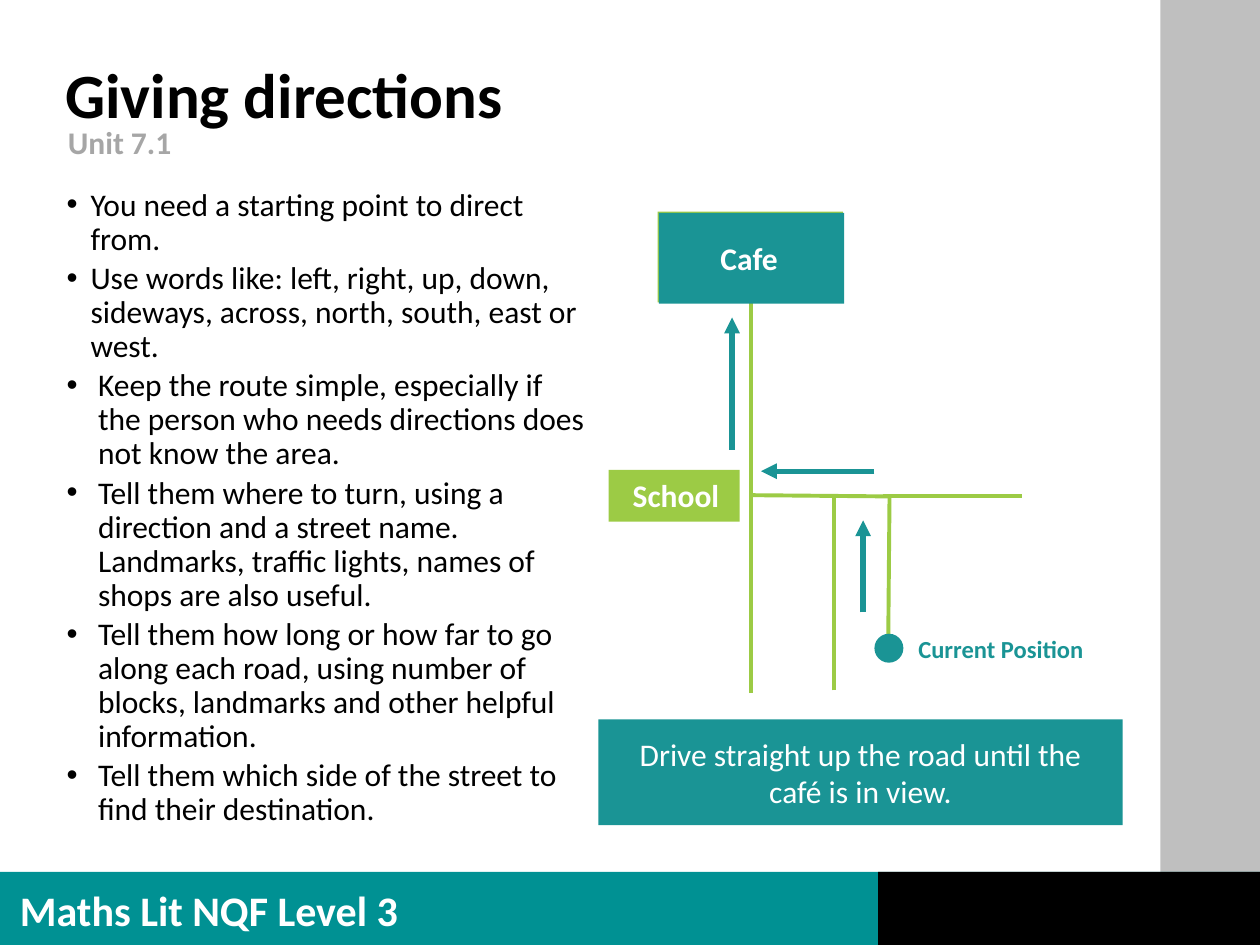
"""Build the 'Giving directions' lesson slide with its street map."""
import pptx
import pptx.dml.color
import pptx.enum.shapes
import pptx.enum.text
import pptx.oxml.ns
import pptx.util
from lxml import etree

THEME = {
    "font": "Calibri",
    "teal": "1A9495", "footer": "009193", "green": "9CCB45", "black": "000000",
    "white": "FFFFFF", "side": "BFBFBF", "muted": "A6A6A6",
    "heading": 36, "course": 24, "text": 18, "note": 14, "road": 2.25, "arrow": 3,
}
COLUMNS, ROWS = 100, 75
RECT = pptx.enum.shapes.MSO_SHAPE.RECTANGLE
OVAL = pptx.enum.shapes.MSO_SHAPE.OVAL
CENTER = pptx.enum.text.PP_ALIGN.CENTER
TOP = pptx.enum.text.MSO_ANCHOR.TOP
MIDDLE = pptx.enum.text.MSO_ANCHOR.MIDDLE

FRAME = [
    (RECT, (92.1, 0, 7.9, 74.9), "side"),
    (RECT, (0, 69.2, 100, 5.8), "footer"),
    (RECT, (69.7, 69.2, 30.3, 5.8), "black"),
]
HEADINGS = [
    ("Maths Lit NQF Level 3", (0.6, 69.7, 37.5, 5), "course", "white"),
    ("Giving directions", (4.2, 4.6, 86.5, 7.9), "heading", "black"),
    ("Unit 7.1", (4.4, 9.6, 86.5, 3.3), "text", "muted"),
]
TIGHT = {"line_spacing": 0.9}
ADVICE_BOX = (4.3, 14.5, 43.2, 51.1)
ADVICE = [
    (0.19, "You need a starting point to direct from."),
    (0.19, "Use words like: left, right, up, down, sideways, across, north, south, east or west."),
    (0.25, "Keep the route simple, especially if the person who needs directions does not know the area."),
    (0.25, "Tell them where to turn, using a direction and a street name. Landmarks, traffic lights, "
           "names of shops are also useful."),
    (0.25, "Tell them how long or how far to go along each road, using number of blocks, "
           "landmarks and other helpful information."),
    (0.25, "Tell them which side of the street to find their destination."),
]
INSTRUCTION = ("Drive straight up the road until the café is in view.", (47.5, 57.1, 41.6, 8.4))

MAIN, SIDE, HOME, CROSSING = 59.6, 66.2, 70.5, 39.3
ROADS = [
    ((HOME, 50.3), (HOME + 0.1, CROSSING)),
    ((HOME, CROSSING + 0.1), (MAIN, CROSSING)),
    ((MAIN, CROSSING), (MAIN, 23.7)),
    ((MAIN, 55), (MAIN, CROSSING)),
    ((81.1, CROSSING + 0.1), (70.1, CROSSING + 0.1)),
    ((SIDE, 54.8), (SIDE, CROSSING)),
]
ROUTE = [
    ((68.5, 48.6), (68.5, 41.3)),
    ((69.4, 37.4), (60.4, 37.4)),
    ((58.1, 35.7), (58.1, 25.2)),
]
PLACES = [
    (OVAL, (69.4, 50.3, 2.3, 2.3), "teal"),
    (RECT, (52.2, 16.8, 14.7, 7.2), "green"),
    (RECT, (48.3, 37.3, 10.4, 4.1), "green"),
    (RECT, (52.3, 16.9, 14.7, 7.2), "teal"),
]
PLACE_NAMES = [
    ("Current Position", (71.9, 49.8, 15.3, 3.4), "note", "teal"),
    ("School", (49.2, 37.3, 8.9, 4), "text", "white"),
    ("Cafe", (56.2, 18.5, 6.6, 4), "text", "white"),
]

deck = pptx.Presentation()
deck.slide_width, deck.slide_height = pptx.util.Inches(10), pptx.util.Inches(7.5)
slide = deck.slides.add_slide(deck.slide_layouts[6])


def color(key):
    return pptx.dml.color.RGBColor.from_string(THEME[key])


def place(*cells):
    sizes = (deck.slide_width / COLUMNS, deck.slide_height / ROWS)
    return [round(cell * sizes[index % 2]) for index, cell in enumerate(cells)]


def apply(target, formats):
    for key, value in formats.items():
        setattr(target, key, value)


def add_element(parent, tag, **attributes):
    return etree.SubElement(parent, pptx.oxml.ns.qn(tag), **attributes)


def add_block(kind, cells, fill):
    block = slide.shapes.add_shape(kind, *place(*cells))
    block.shadow.inherit = False
    block.fill.solid()
    block.fill.fore_color.rgb = color(fill)
    block.line.fill.background()
    return block


def write(paragraph, words, size, ink, bold=False, layout=None):
    paragraph.text = words
    apply(paragraph, layout or {})
    apply(paragraph.font, {"name": THEME["font"], "size": pptx.util.Pt(THEME[size]), "bold": bold})
    paragraph.font.color.rgb = color(ink)


def add_text(cells, wrap=True):
    frame = slide.shapes.add_textbox(*place(*cells)).text_frame
    apply(frame, {"word_wrap": wrap, "vertical_anchor": TOP})
    return frame


def add_path(start, end, ink, width, arrow=False):
    path = slide.shapes.add_connector(
        pptx.enum.shapes.MSO_CONNECTOR.STRAIGHT, *place(*start, *end))
    path.line.color.rgb = color(ink)
    path.line.width = pptx.util.Pt(THEME[width])
    if arrow:
        add_element(path.line._get_or_add_ln(), "a:tailEnd", type="triangle")
    add_element(path._element.spPr, "a:effectLst")


def add_advice():
    frame = add_text(ADVICE_BOX)
    for index, (indent, words) in enumerate(ADVICE):
        paragraph = frame.paragraphs[0] if index == 0 else frame.add_paragraph()
        properties = paragraph._p.get_or_add_pPr()
        hang = pptx.util.Inches(indent)
        apply_indent = {"marL": str(hang), "indent": str(-hang)}
        for key, value in apply_indent.items():
            properties.set(key, value)
        add_element(properties, "a:buFont", typeface="Arial")
        add_element(properties, "a:buChar", char="•")
        gap = {"space_before": pptx.util.Pt(3)} if index else {}
        write(paragraph, words, "text", "black", layout=TIGHT | gap)


def add_instruction():
    words, cells = INSTRUCTION
    frame = add_block(RECT, cells, "teal").text_frame
    side, edge = pptx.util.Inches(0.16), pptx.util.Inches(0.12)
    apply(frame, {"word_wrap": True, "vertical_anchor": MIDDLE, "margin_left": side,
                  "margin_right": side, "margin_top": edge, "margin_bottom": edge})
    write(frame.paragraphs[0], words, "text", "white", layout={"alignment": CENTER})


def main():
    for block in FRAME:
        add_block(*block)
    for words, cells, size, ink in HEADINGS:
        layout = {} if size == "course" else TIGHT
        write(add_text(cells).paragraphs[0], words, size, ink, True, layout)
    add_instruction()
    for start, end in ROADS:
        add_path(start, end, "green", "road")
    for start, end in ROUTE:
        add_path(start, end, "teal", "arrow", arrow=True)
    for block in PLACES:
        add_block(*block)
    for words, cells, size, ink in PLACE_NAMES:
        write(add_text(cells, wrap=False).paragraphs[0], words, size, ink, True,
              {"alignment": CENTER} if words == "School" else {})
    add_advice()
    deck.save("out.pptx")


if __name__ == "__main__":
    main()
